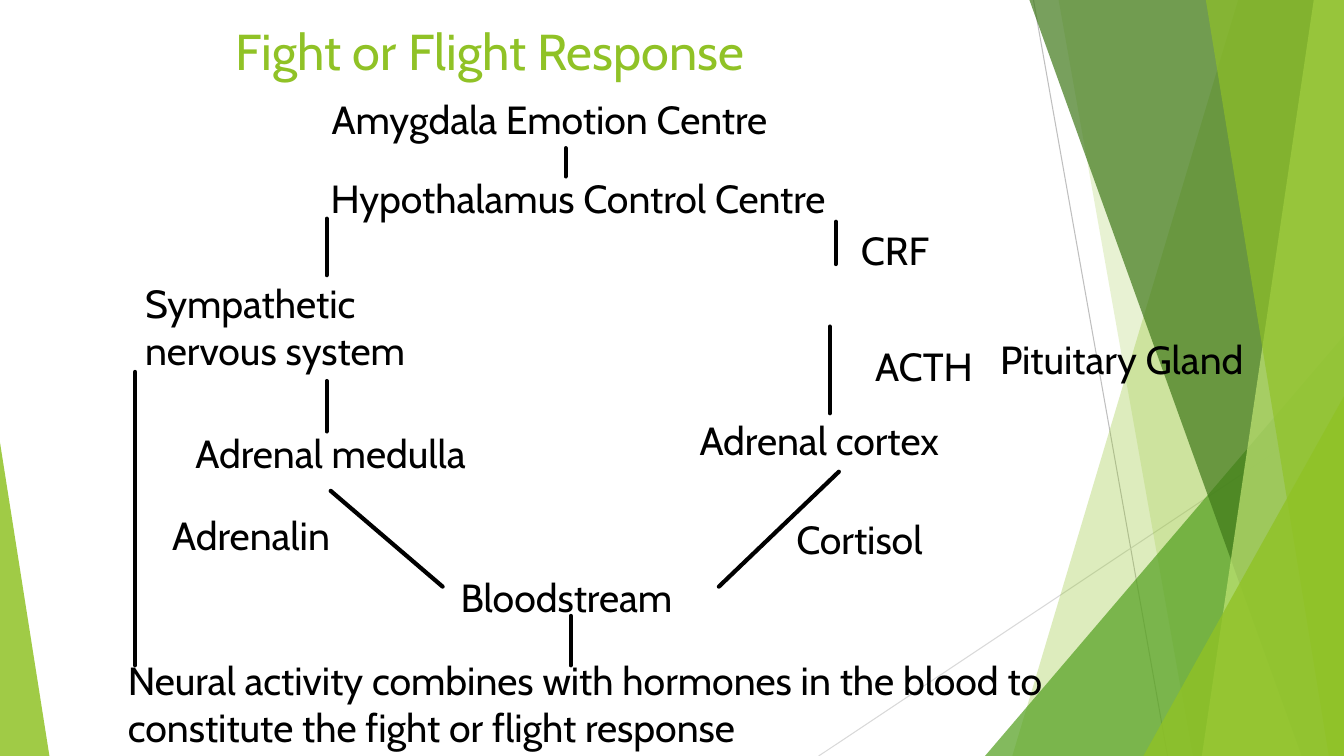
"""Build the Fight or Flight Response slide: a pathway diagram on a green faceted backdrop."""
from dataclasses import dataclass

from lxml.etree import SubElement
from pptx import Presentation
from pptx.dml.color import RGBColor
from pptx.enum.shapes import MSO_CONNECTOR, MSO_SHAPE
from pptx.enum.text import MSO_ANCHOR, PP_ALIGN
from pptx.oxml.ns import qn
from pptx.util import Inches, Pt


@dataclass(frozen=True)
class Theme:
    font: str = "Cabin"
    title_size: int = 36
    label_size: int = 28
    ink: str = "000000"
    lime: str = "90C226"
    green: str = "54A021"
    forest: str = "3F7819"
    pale: str = "C0E474"
    grey: str = "BFBFBF"
    light_grey: str = "D9D9D9"
    hairline: float = 0.75
    link: float = 3


theme = Theme()
WIDTH, HEIGHT = 13.33, 7.5


def draw_line(start, end, colour, weight):
    line = page.shapes.add_connector(
        MSO_CONNECTOR.STRAIGHT, *(Inches(value) for value in start + end))
    line.line.color.rgb = RGBColor.from_string(colour)
    line.line.width = Pt(weight)
    properties = line._element.spPr
    properties.get_or_add_ln().set("cap", "rnd")
    SubElement(properties, qn("a:effectLst"))


def paint(shape, colour, opacity):
    shape.shadow.inherit = False
    shape.line.fill.background()
    shape.fill.solid()
    shape.fill.fore_color.rgb = RGBColor.from_string(colour)
    tint = shape._element.spPr.find(qn("a:solidFill")).find(qn("a:srgbClr"))
    SubElement(tint, qn("a:alpha")).set("val", str(opacity * 1000))


deck = Presentation()
deck.slide_width, deck.slide_height = Inches(WIDTH), Inches(HEIGHT)
page = deck.slides.add_slide(deck.slide_layouts[5])

draw_line((10.25, 0), (11.58, HEIGHT), theme.grey, theme.hairline)
draw_line((WIDTH, 4.03), (8.12, HEIGHT), theme.light_grey, theme.hairline)

# Bands give top and bottom x of the left edge; corners give left and top.
facets = [
    ("band", 12.28, 10.04, theme.lime, 30),
    ("band", 10.5, 11.83, theme.lime, 20),
    ("corner", 9.77, 3.33, theme.green, 72),
    ("band", 10.21, 12.91, theme.forest, 70),
    ("band", 13.03, 11.92, theme.pale, 70),
    ("band", 11.96, 13.18, theme.lime, 65),
    ("corner", 11.34, 3.93, theme.lime, 80),
]
for kind, first, second, colour, opacity in facets:
    if kind == "band":
        outline = page.shapes.build_freeform(Inches(first), 0)
        outline.add_line_segments(
            [(Inches(WIDTH), 0), (Inches(WIDTH), Inches(HEIGHT)),
             (Inches(second), Inches(HEIGHT))], close=True)
        facet = outline.convert_to_shape()
    else:
        facet = page.shapes.add_shape(
            MSO_SHAPE.ISOSCELES_TRIANGLE, Inches(first), Inches(second),
            Inches(WIDTH - first), Inches(HEIGHT - second))
        facet.adjustments[0] = 1
    paint(facet, colour, opacity)

left_corner = page.shapes.add_shape(
    MSO_SHAPE.ISOSCELES_TRIANGLE, 0, Inches(4.39), Inches(0.49), Inches(3.11))
left_corner.adjustments[0] = 0
paint(left_corner, theme.lime, 85)

title = page.shapes.title
title.left, title.top = Inches(0.74), Inches(0.1)
title.width, title.height = Inches(9.4), Inches(0.79)
title.text_frame.margin_left = Inches(1.6)
title.text_frame.vertical_anchor = MSO_ANCHOR.MIDDLE
para = title.text_frame.paragraphs[0]
para.alignment = PP_ALIGN.LEFT
span = para.add_run()
span.text = "Fight or Flight Response"
span.font.name = theme.font
span.font.size = Pt(theme.title_size)
span.font.color.rgb = RGBColor.from_string(theme.lime)

links = [
    ((5.61, 1.47), (5.61, 1.75)),
    ((3.24, 2.17), (3.24, 2.73)),
    ((8.29, 2.2), (8.29, 2.62)),
    ((8.23, 3.24), (8.23, 4.1)),
    ((3.24, 3.78), (3.24, 4.28)),
    ((1.34, 3.69), (1.34, 6.6)),
    ((8.32, 4.68), (7.13, 5.82)),
    ((3.28, 4.87), (4.39, 5.82)),
    ((5.66, 6.11), (5.66, 6.6)),
]
for start, end in links:
    draw_line(start, end, theme.ink, theme.link)

one_line, two_lines = 0.57, 1.04
labels = [
    ("Amygdala Emotion Centre", 3.19, 0.9, 4.85, one_line),
    ("Hypothalamus Control Centre", 3.18, 1.68, 6.37, one_line),
    ("CRF", 8.44, 2.2, 1, one_line),
    ("Sympathetic nervous system", 1.34, 2.72, 3.35, two_lines),
    ("Pituitary Gland", 9.82, 3.28, 2.9, one_line),
    ("Adrenal cortex", 6.84, 4.08, 2.9, one_line),
    ("ACTH", 8.58, 3.35, 1.71, one_line),
    ("Adrenal medulla", 1.84, 4.21, 3.35, one_line),
    ("Cortisol", 7.8, 5.06, 1.92, one_line),
    ("Adrenalin", 1.61, 5.02, 1.91, one_line),
    ("Bloodstream", 4.47, 5.64, 2.66, one_line),
    ("Neural activity combines with hormones in the blood to "
     "constitute the fight or flight response", 1.17, 6.46, 10.02, two_lines),
]
for text, *frame in labels:
    box = page.shapes.add_textbox(*(Inches(value) for value in frame))
    box.text_frame.word_wrap = True
    span = box.text_frame.paragraphs[0].add_run()
    span.text = text
    span.font.name = theme.font
    span.font.size = Pt(theme.label_size)
    span.font.color.rgb = RGBColor.from_string(theme.ink)

deck.save("out.pptx")
